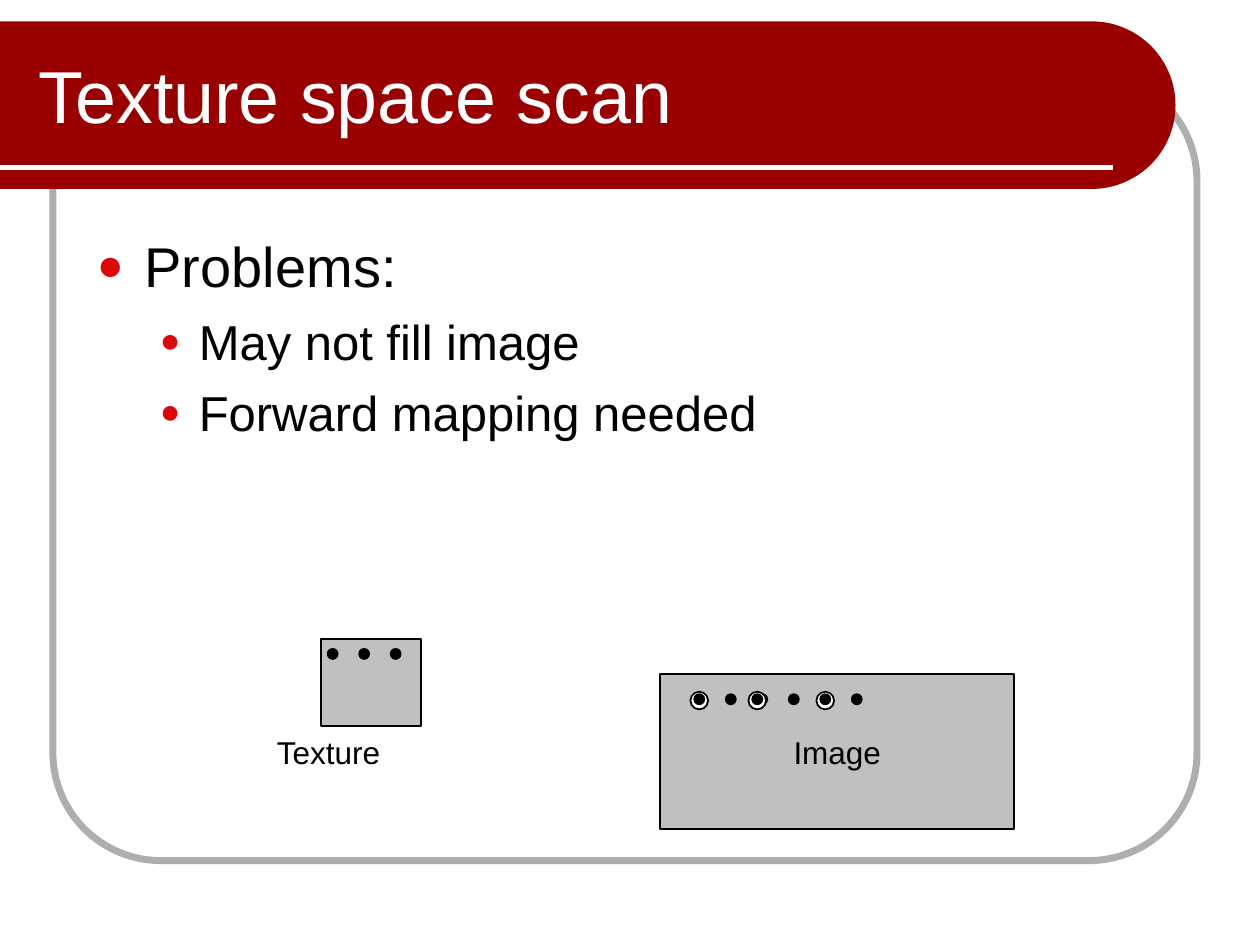
import math

import pptx
import pptx.dml.color
import pptx.enum.shapes
import pptx.enum.text
import pptx.oxml
import pptx.oxml.ns
import pptx.util

PX = 9144  # EMU per px, 100 px to the inch
RGB = pptx.dml.color.RGBColor
RED = RGB(0x99, 0x00, 0x00)
BULLET_RED = RGB(0xDA, 0x08, 0x08)
FRAME_GREY = RGB(0xAE, 0xAE, 0xAE)
PANEL_GREY = RGB(0xC0, 0xC0, 0xC0)
BLACK = RGB(0, 0, 0)
WHITE = RGB(255, 255, 255)
FONT = "Arial"
SHAPE = pptx.enum.shapes.MSO_SHAPE
ANCHOR = pptx.enum.text.MSO_ANCHOR
ALIGN = pptx.enum.text.PP_ALIGN


def px(*lengths):
    return [round(n * PX) for n in lengths]


def add_run(p, text, size, color):
    r = p.add_run()
    r.text = text
    r.font.name = FONT
    r.font.size = pptx.util.Pt(size)
    r.font.color.rgb = color


def add_shape(s, kind, box, fill=None, line=BLACK, width=1):
    sp = s.shapes.add_shape(kind, *px(*box))
    sp.shadow.inherit = False
    if fill is None:
        sp.fill.background()
    else:
        sp.fill.solid()
        sp.fill.fore_color.rgb = fill
    sp.line.color.rgb = line
    sp.line.width = pptx.util.Pt(width)
    return sp


def add_text_box(s, box, wrap=True, anchor=ANCHOR.TOP):
    tf = s.shapes.add_textbox(*px(*box)).text_frame
    tf.word_wrap = wrap
    tf.vertical_anchor = anchor
    return tf


def add_bullet(p, margin, indent, percent):
    """Give the paragraph a hanging round bullet; lengths in px."""
    pPr = p._p.get_or_add_pPr()
    pPr.set("marL", str(margin * PX))
    pPr.set("indent", str(-indent * PX))
    ns = pptx.oxml.ns.nsdecls("a")
    for xml in (
        f'<a:buClr {ns}><a:srgbClr val="{BULLET_RED}"/></a:buClr>',
        f'<a:buSzPct {ns} val="{percent * 1000}"/>',
        f'<a:buFont {ns} typeface="{FONT}"/>',
        f'<a:buChar {ns} char="●"/>',
    ):
        pPr.append(pptx.oxml.parse_xml(xml))


def draw_frame(s, box):
    sp = add_shape(s, SHAPE.ROUNDED_RECTANGLE, box, None, FRAME_GREY, 4)
    sp.adjustments[0] = 0.137


def draw_header(s, box, title):
    """Red band with a round right end, a white rule and the title."""
    x, y, w, h = box
    radius = h / 2
    cx, cy = x + w - radius, y + radius
    angles = [math.radians(a) for a in range(-90, 91, 3)]
    arc = [px(cx + radius * math.cos(a), cy + radius * math.sin(a)) for a in angles]
    builder = s.shapes.build_freeform(*px(x, y), scale=1.0)
    builder.add_line_segments(arc + [px(x, y + h)], close=True)
    band = builder.convert_to_shape()
    band.shadow.inherit = False
    band.fill.solid()
    band.fill.fore_color.rgb = RED
    band.line.fill.background()

    rule = s.shapes.add_connector(
        pptx.enum.shapes.MSO_CONNECTOR.STRAIGHT,
        *px(x, y + 116, x + w - 50, y + 116))
    rule.line.color.rgb = WHITE
    rule.line.width = pptx.util.Pt(3)
    rule._element.spPr.append(
        pptx.oxml.parse_xml(f'<a:effectLst {pptx.oxml.ns.nsdecls("a")}/>'))

    tf = add_text_box(s, (x + 21, y + 8, 779, 100), anchor=ANCHOR.MIDDLE)
    add_run(tf.paragraphs[0], title, 42, WHITE)


def draw_body(s, box, heading, points):
    tf = add_text_box(s, box)
    p = tf.paragraphs[0]
    add_bullet(p, 38, 38, 80)
    add_run(p, heading, 32, BLACK)
    for point in points:
        p = tf.add_paragraph()
        p.level = 1
        p.space_before = pptx.util.Pt(7)
        add_bullet(p, 81, 31, 70)
        add_run(p, point, 28, BLACK)


def draw_dot(s, x, y):
    add_shape(s, SHAPE.OVAL, (x, y, 8, 8), BLACK)


def draw_ring(s, x, y):
    add_shape(s, SHAPE.OVAL, (x, y, 14, 14), WHITE)


def draw_dot_row(s, x, y, count):
    for i in range(count):
        draw_dot(s, x + 25 * i, y)


def draw_texture(s, box):
    x, y, w, h = box
    add_shape(s, SHAPE.RECTANGLE, box, PANEL_GREY)
    draw_dot_row(s, x + 5, y + 8, 3)
    tf = add_text_box(s, (x - 45, y + h + 1, 124, 50), wrap=False)
    add_run(tf.paragraphs[0], "Texture", 18, BLACK)


def draw_image(s, box):
    """Image panel: a row of samples, three of them ringed."""
    x, y, w, h = box
    tf = add_shape(s, SHAPE.RECTANGLE, box, PANEL_GREY).text_frame
    tf.word_wrap = False
    tf.vertical_anchor = ANCHOR.MIDDLE
    tf.paragraphs[0].alignment = ALIGN.CENTER
    add_run(tf.paragraphs[0], "Image", 18, BLACK)
    draw_ring(s, x + 24, y + 14)
    draw_dot_row(s, x + 27, y + 16, 6)
    for offset in (70, 124):
        draw_ring(s, x + offset, y + 14)
        draw_dot(s, x + offset + 3, y + 16)


def main():
    prs = pptx.Presentation()
    prs.slide_width, prs.slide_height = px(1000, 750)
    s = prs.slides.add_slide(prs.slide_layouts[6])
    draw_frame(s, (42, 58, 908, 625))
    draw_header(s, (0, 17, 933, 133), "Texture space scan")
    draw_body(s, (67, 179, 867, 479), "Problems:",
              ["May not fill image", "Forward mapping needed"])
    draw_image(s, (524, 535, 281, 123))
    draw_texture(s, (255, 507, 79, 69))
    prs.save("out.pptx")


if __name__ == "__main__":
    main()
